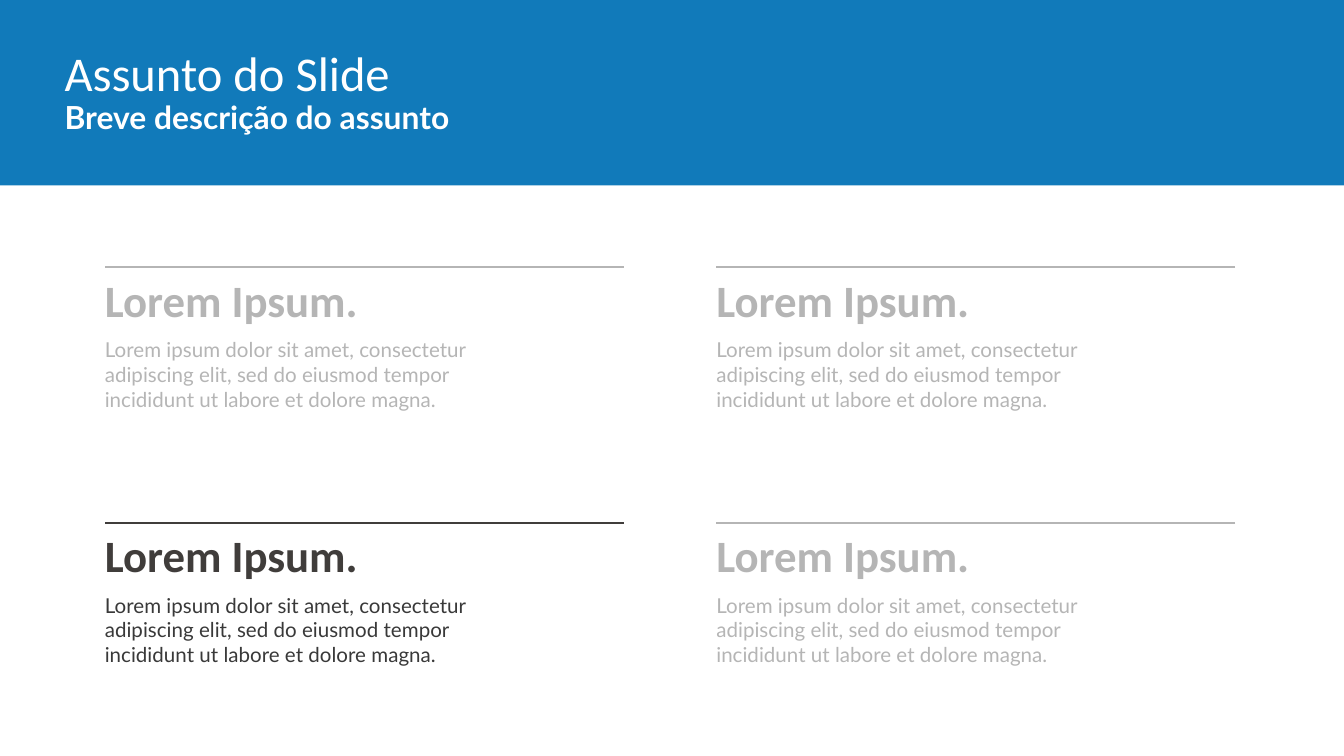
from lxml import etree
from pptx import Presentation
from pptx import util as u
from pptx.dml.color import RGBColor
from pptx.enum import shapes, text
from pptx.oxml.ns import qn

BLUE, WHITE, GRAY = "117ABA", "FFFFFF", "B5B5B5"
DARK, DARK_BODY = "403D3B", "393939"
HEADING = "Lorem Ipsum."
BODY = ("Lorem ipsum dolor sit amet, consectetur adipiscing elit, "
        "sed do eiusmod tempor incididunt ut labore et dolore magna.")
COLUMNS = (0.78, 5.33)
ROWS = (1.99, 3.89)
ACTIVE = (0, 1)


def rgb(value):
    return RGBColor.from_string(value)


def place(sp, left, top, width, height):
    sp.left, sp.top = u.Inches(left), u.Inches(top)
    sp.width, sp.height = u.Inches(width), u.Inches(height)


def write(sp, content, size, font, color, bold=False, after=0):
    tf = sp.text_frame
    tf.word_wrap = True
    tf.auto_size = text.MSO_AUTO_SIZE.NONE
    tf.vertical_anchor = text.MSO_ANCHOR.TOP
    tf.margin_left = tf.margin_right = tf.margin_top = tf.margin_bottom = 0
    p = tf.paragraphs[0]
    p.alignment = text.PP_ALIGN.LEFT
    p.space_before, p.space_after = u.Pt(0), u.Pt(after)
    r = p.add_run()
    r.text = content
    r.font.size, r.font.name, r.font.bold = u.Pt(size), font, bold
    r.font.color.rgb = rgb(color)


def add_text(s, box, *args, **kwargs):
    sp = s.shapes.add_textbox(*map(u.Inches, box))
    write(sp, *args, **kwargs)


def add_band(s, width, height):
    sp = s.shapes.add_shape(shapes.MSO_SHAPE.RECTANGLE, 0, 0,
                            u.Inches(width), u.Inches(height))
    sp.shadow.inherit = False
    sp.fill.solid()
    sp.fill.fore_color.rgb = rgb(BLUE)
    sp.line.fill.background()
    s.shapes._spTree.insert(2, sp._element)


def add_rule(s, left, top, width, color):
    line = s.shapes.add_connector(
        shapes.MSO_CONNECTOR.STRAIGHT, u.Inches(left + width), u.Inches(top),
        u.Inches(left), u.Inches(top))
    line.line.color.rgb = rgb(color)
    line.line.width = u.Pt(1)
    etree.SubElement(line._element.spPr, qn("a:effectLst"))


def add_topic(s, left, top, color, body_color):
    add_text(s, (left, top + 0.04, 3.35, 0.34), HEADING, 24, "Calibri", color, bold=True)
    add_text(s, (left, top + 0.52, 2.78, 0.59), BODY, 11, "Lato", body_color, after=8)
    add_rule(s, left, top, 3.86, color)


def main():
    prs = Presentation()
    prs.slide_width = u.Inches(10)
    prs.slide_height = prs.slide_width * 9 // 16
    s = prs.slides.add_slide(prs.slide_layouts[5])
    add_band(s, 10, 1.38)
    for col, left in enumerate(COLUMNS):
        for row, top in enumerate(ROWS):
            colors = (DARK, DARK_BODY) if (col, row) == ACTIVE else (GRAY, GRAY)
            add_topic(s, left, top, *colors)
    title = s.shapes.title
    place(title, 0.48, 0.32, 3.35, 0.42)
    write(title, "Assunto do Slide", 26, "Calibri", WHITE)
    add_text(s, (0.48, 0.73, 3.75, 0.46), "Breve descrição do assunto", 17, "Lato", WHITE, bold=True)
    prs.save("out.pptx")


if __name__ == "__main__":
    main()
